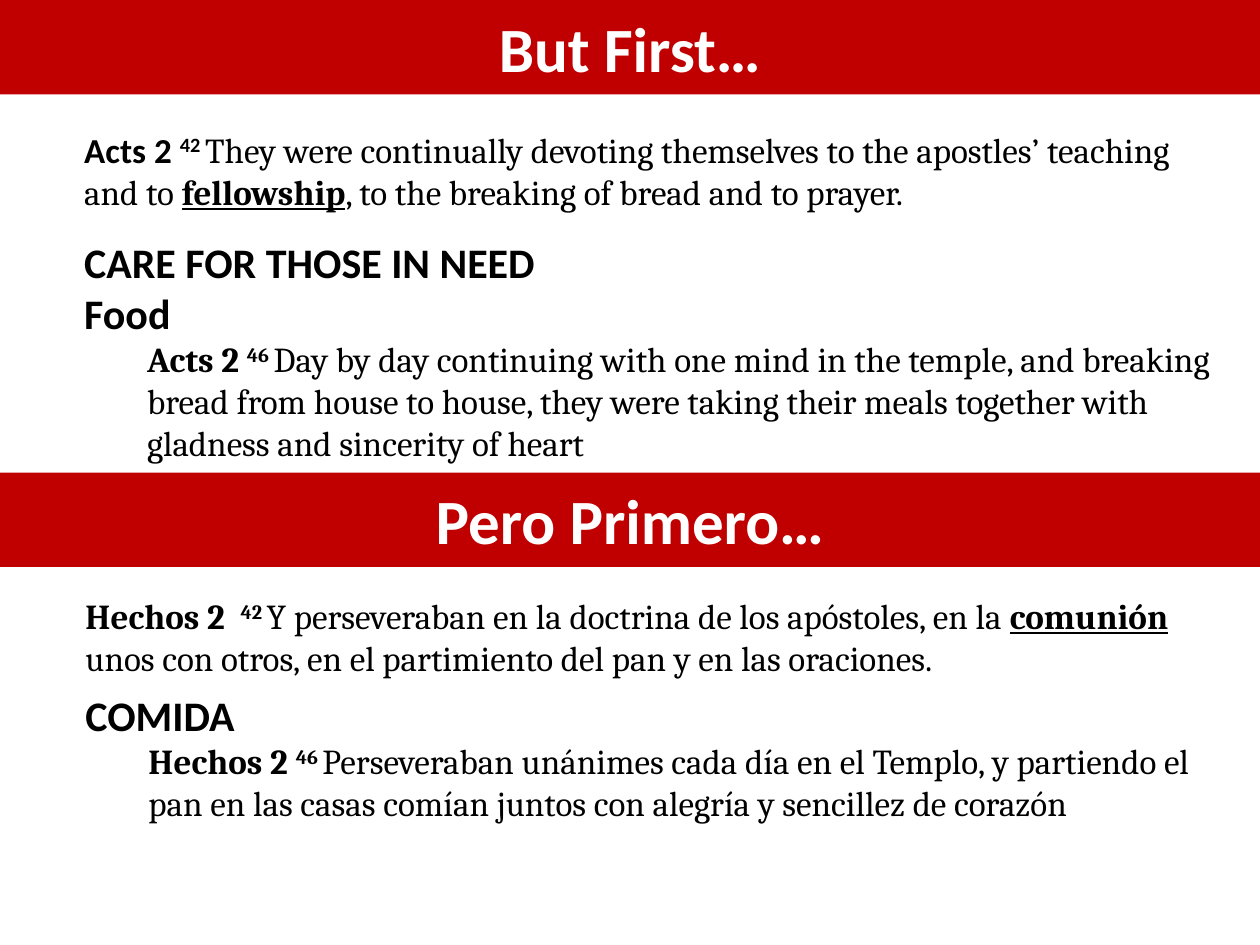
from dataclasses import dataclass

from pptx import Presentation
from pptx.dml.color import RGBColor
from pptx.enum.shapes import MSO_SHAPE as Shape
from pptx.enum.text import MSO_ANCHOR as Anchor, MSO_AUTO_SIZE as AutoSize, PP_ALIGN as Align
from pptx.slide import Slide
from pptx.util import Emu, Pt

PX = 9144  # EMU per px, at 100 px to the inch
WIDTH, HEIGHT = 1000, 750
BANNER_H = 75

RED = RGBColor(0xC0, 0x00, 0x00)
WHITE = RGBColor(0xFF, 0xFF, 0xFF)
BLACK = RGBColor(0x00, 0x00, 0x00)

SANS, SERIF = "Calibri", "Cambria"


@dataclass(frozen=True)
class Run:
    text: str
    font: str = SERIF
    size: int = 20
    bold: bool = False
    underline: bool = False
    raised: bool = False


@dataclass(frozen=True)
class Para:
    runs: list[Run]
    level: int = 0


@dataclass(frozen=True)
class Banner:
    text: str
    top: int


@dataclass(frozen=True)
class TextBlock:
    left: int
    top: int
    width: int
    height: int
    paras: list[Para]


def px(n: int) -> Emu:
    return Emu(n * PX)


def heading(text: str) -> Para:
    return Para([Run(text, SANS, 24, bold=True)])


def verse(book: str, number: str, *body: Run, level: int = 0, font: str = SERIF) -> Para:
    """A bold reference with a raised verse number, then the verse itself."""
    return Para([Run(book, font, bold=True),
                 Run(number, font, bold=True, raised=True), *body], level)


def key_word(text: str) -> Run:
    return Run(text, bold=True, underline=True)


def add_run(p, run: Run, color: RGBColor) -> None:
    r = p.add_run()
    r.text = run.text
    r.font.name = run.font
    r.font.size = Pt(run.size)
    r.font.bold = run.bold
    r.font.underline = run.underline
    r.font.color.rgb = color
    if run.raised:
        r.font._element.set("baseline", "30000")


def add_banner(s: Slide, banner: Banner) -> None:
    sp = s.shapes.add_shape(Shape.RECTANGLE, 0, px(banner.top), px(WIDTH), px(BANNER_H))
    sp.shadow.inherit = False
    sp.fill.solid()
    sp.fill.fore_color.rgb = RED
    sp.line.fill.background()
    tf = sp.text_frame
    tf.word_wrap = True
    tf.vertical_anchor = Anchor.MIDDLE
    p = tf.paragraphs[0]
    p.alignment = Align.CENTER
    add_run(p, Run(banner.text, SANS, 36, bold=True), WHITE)


def add_text_block(s: Slide, block: TextBlock) -> None:
    sp = s.shapes.add_textbox(px(block.left), px(block.top), px(block.width), px(block.height))
    tf = sp.text_frame
    tf.word_wrap = True
    tf.auto_size = AutoSize.SHAPE_TO_FIT_TEXT
    for i, para in enumerate(block.paras):
        p = tf.add_paragraph() if i else tf.paragraphs[0]
        p.level = para.level
        for run in para.runs:
            add_run(p, run, BLACK)


BANNERS = [Banner("But First…", 0), Banner("Pero Primero…", HEIGHT // 2)]

BLOCKS = [
    # English half
    TextBlock(57, 97, 886, 77, [
        verse("Acts 2 ", "42 ",
              Run("They were continually devoting themselves to the apostles’ teaching and to "),
              key_word("fellowship"),
              Run(", to the breaking of bread and to prayer."), font=SANS),
    ]),
    TextBlock(57, 183, 926, 192, [
        heading("CARE FOR THOSE IN NEED"),
        heading("Food"),
        verse("Acts 2 ", "46 ",
              Run("Day by day continuing with one mind in the temple, and breaking bread from "
                  "house to house, they were taking their meals together with gladness and "
                  "sincerity of heart"), level=1),
    ]),
    # Spanish half
    TextBlock(58, 467, 900, 77, [
        verse("Hechos 2  ", "42 ",
              Run("Y perseveraban en la doctrina de los apóstoles, en la "),
              key_word("comunión"),
              Run(" unos con otros, en el partimiento del pan y en las oraciones.")),
    ]),
    TextBlock(58, 542, 926, 151, [
        heading("COMIDA"),
        verse("Hechos 2 ", "46 ",
              Run("Perseveraban unánimes cada día en el Templo, y partiendo el pan en las casas "
                  "comían juntos con alegría y sencillez de corazón"), level=1),
    ]),
]


def main() -> None:
    prs = Presentation()
    prs.slide_width, prs.slide_height = px(WIDTH), px(HEIGHT)
    s = prs.slides.add_slide(prs.slide_layouts[6])
    for banner in BANNERS:
        add_banner(s, banner)
    for block in BLOCKS:
        add_text_block(s, block)
    prs.save("out.pptx")


if __name__ == "__main__":
    main()
